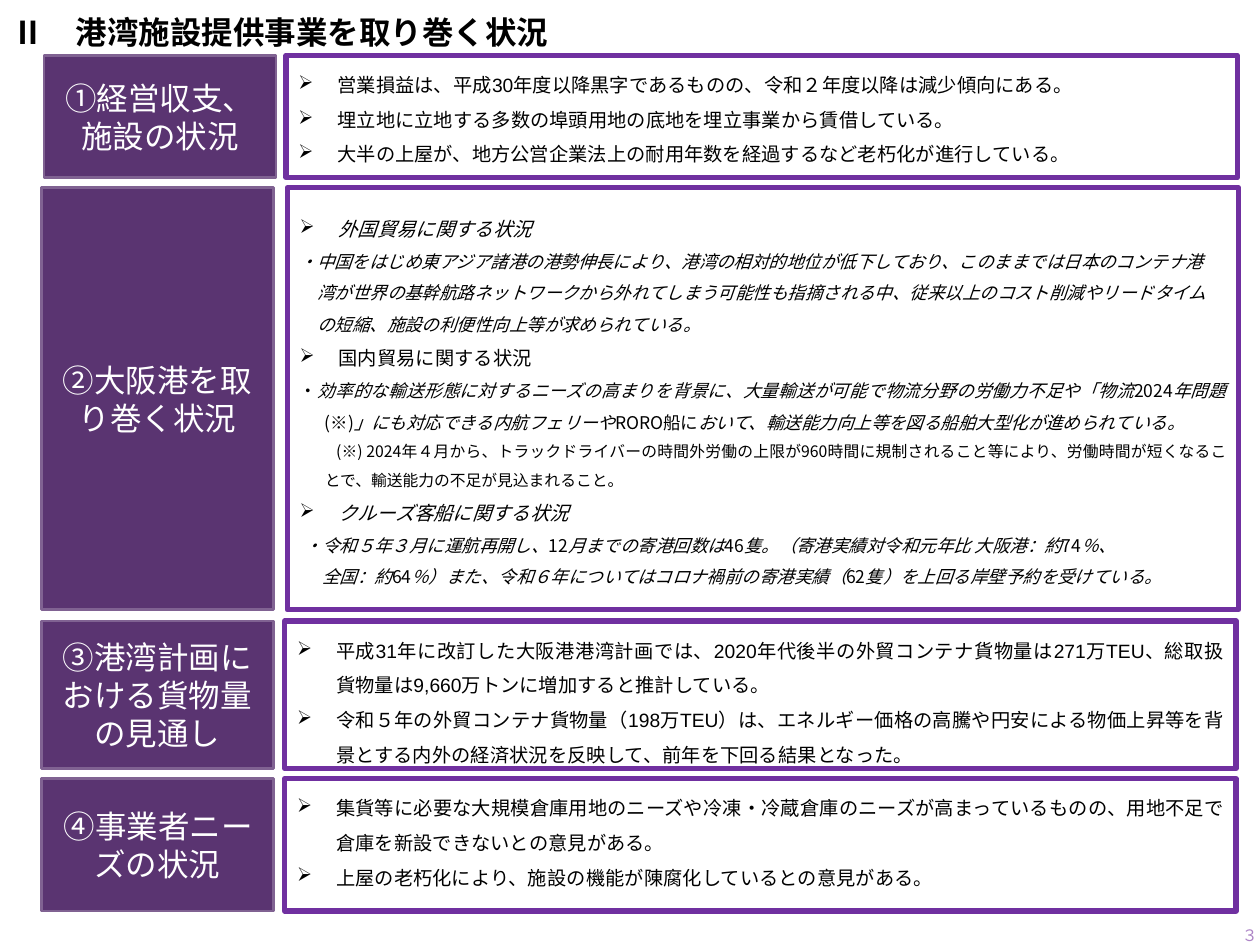
from pptx import Presentation
from pptx.dml.color import RGBColor
from pptx.enum.shapes import MSO_SHAPE as Shape
from pptx.enum.text import MSO_ANCHOR as Anchor, MSO_AUTO_SIZE as Fit, PP_ALIGN as Align
from pptx.oxml.ns import qn
from pptx.util import Inches, Pt
from lxml.etree import SubElement

BLACK = RGBColor(0x00, 0x00, 0x00)
WHITE = RGBColor(0xFF, 0xFF, 0xFF)
PLUM = RGBColor(0x5A, 0x34, 0x71)
EDGE = RGBColor(0x80, 0x62, 0x92)
FRAME = RGBColor(0x70, 0x30, 0xA0)
LILAC = RGBColor(0xAD, 0x84, 0xC6)
CJK = "Noto Sans CJK JP"


def add_run(para, text, size, face, color, bold=False, slant=False):
    run = para.add_run()
    run.text = text
    font = run.font
    font.size, font.name, font.bold, font.italic = Pt(size), face, bold, slant
    font.color.rgb = color
    SubElement(font._element, qn("a:ea"), typeface=CJK)


def add_box(left, top, wide, high, line, weight):
    box = slide.shapes.add_shape(
        Shape.RECTANGLE, Inches(left), Inches(top), Inches(wide), Inches(high))
    box.shadow.inherit = False
    box.line.color.rgb = line
    box.line.width = Pt(weight)
    box.text_frame.word_wrap = True
    return box


deck = Presentation()
deck.slide_width, deck.slide_height = Inches(10), Inches(7.5)
slide = deck.slides.add_slide(deck.slide_layouts[5])

title = slide.shapes.title
title.left, title.top = Inches(0), Inches(0.05)
title.width, title.height = Inches(8.62), Inches(0.68)
frame = title.text_frame
frame.auto_size = Fit.NONE
frame.vertical_anchor = Anchor.TOP
para = frame.paragraphs[0]
para.alignment = Align.LEFT
add_run(para, "Ⅱ\u3000港湾施設提供事業を取り巻く状況".replace("\u3000", "　"),
        18, "Arial", BLACK, bold=True)

# kind: margin, first-line indent, size, bullet, alignment
KINDS = {
    "point": (0.31, -0.31, 11, True, Align.JUSTIFY),
    "lines": (0.14, -0.14, 10, False, Align.LEFT),
    "text": (0.2, -0.2, 10, False, Align.JUSTIFY),
    "note": (0.2, 0.09, 9, False, Align.JUSTIFY),
    "tail": (0.18, -0.14, 10, False, Align.LEFT),
}

# each paragraph: kind, line spacing, first run italic, runs alternating italic and upright
ROWS = [
    ("①経営収支、施設の状況", 0.35, 2.27, 0.44, 0.97, "Arial", [
        ("point", 1.5, False, ["営業損益は、平成30年度以降黒字であるものの、令和２年度以降は減少傾向にある。"]),
        ("point", 1.5, False, ["埋立地に立地する多数の埠頭用地の底地を埋立事業から賃借している。"]),
        ("point", 1.5, False, ["大半の上屋が、地方公営企業法上の耐用年数を経過するなど老朽化が進行している。"]),
    ]),
    ("②大阪港を取り巻く状況", 0.33, 2.28, 1.49, 3.35, CJK, [
        ("point", 2, True, ["外国貿易に関する状況"]),
        ("lines", 1.5, True, [
            "・中国をはじめ東アジア諸港の港勢伸長により、港湾の相対的地位が低下しており、このままでは日本のコンテナ港\n"
            "湾が世界の基幹航路ネットワークから外れてしまう可能性も指摘される中、従来以上のコスト削減やリードタイム\n"
            "の短縮、施設の利便性向上等が求められている。"]),
        ("point", 1.5, False, ["国内貿易に関する状況"]),
        ("text", 1.5, False, [
            "・", "効率的な輸送形態に対するニーズの高まりを背景に、大量輸送が可能で物流分野の労働力不足や「物流",
            "2024", "年問題", "(※)", "」にも対応できる内航フェリーや", "RORO船に",
            "おいて、輸送能力向上等を図る船舶大型化が進められている。"]),
        ("note", 1.5, False, [
            "(※) 2024年４月から、トラックドライバーの時間外労働の上限が960時間に規制されること等により、"
            "労働時間が短くなることで、輸送能力の不足が見込まれること。"]),
        ("point", 1.5, True, ["クルーズ客船に関する状況"]),
        ("tail", 1.5, True, [
            "・令和５年３月に運航再開し、", "12", "月までの寄港回数は", "46",
            "隻。（寄港実績対令和元年比 大阪港：約", "74", "％、\n全国：約", "64",
            "％）また、令和６年についてはコロナ禍前の寄港実績（", "62",
            "隻）を上回る岸壁予約を受けている。"]),
    ]),
    ("③港湾計画における貨物量の見通し", 0.33, 2.26, 4.93, 1.17, "Arial", [
        ("point", 1.5, False, [
            "平成31年に改訂した大阪港港湾計画では、2020年代後半の外貿コンテナ貨物量は271万TEU、"
            "総取扱貨物量は9,660万トンに増加すると推計している。"]),
        ("point", 1.5, False, [
            "令和５年の外貿コンテナ貨物量（198万TEU）は、エネルギー価格の高騰や円安による物価上昇等を"
            "背景とする内外の経済状況を反映して、前年を下回る結果となった。"]),
    ]),
    ("④事業者ニーズの状況", 0.33, 2.26, 6.18, 1.05, "Arial", [
        ("point", 1.5, False, [
            "集貨等に必要な大規模倉庫用地のニーズや冷凍・冷蔵倉庫のニーズが高まっているものの、"
            "用地不足で倉庫を新設できないとの意見がある。"]),
        ("point", 1.5, False, ["上屋の老朽化により、施設の機能が陳腐化しているとの意見がある。"]),
    ]),
]

for head, left, edge, top, high, face, items in ROWS:
    label = add_box(left, top, 1.84, high, EDGE, 1.5)
    label.fill.solid()
    label.fill.fore_color.rgb = PLUM
    label.text_frame.vertical_anchor = Anchor.MIDDLE
    para = label.text_frame.paragraphs[0]
    para.alignment = Align.CENTER
    add_run(para, head, 18, "Quicksand", WHITE)

    panel = add_box(edge, top, 7.55, high, FRAME, 3)
    panel.fill.background()
    frame = panel.text_frame
    frame.vertical_anchor = Anchor.TOP
    for rank, (kind, space, slant, runs) in enumerate(items):
        margin, indent, size, mark, align = KINDS[kind]
        para = frame.add_paragraph() if rank else frame.paragraphs[0]
        para.alignment = align
        para.line_spacing = space
        props = para._p.get_or_add_pPr()
        props.set("marL", str(Inches(margin)))
        props.set("indent", str(Inches(indent)))
        if mark:
            SubElement(props, qn("a:buFont"), typeface="Wingdings")
            SubElement(props, qn("a:buChar"), char="Ø")
        for text in runs:
            for part, line in enumerate(text.split("\n")):
                if part:
                    para.add_line_break()
                add_run(para, line, size, face, BLACK, slant=slant)
            slant = not slant

page = slide.shapes.add_textbox(Inches(9.52), Inches(7.22), Inches(0.56), Inches(0.4))
page.text_frame.word_wrap = True
page.text_frame.vertical_anchor = Anchor.MIDDLE
para = page.text_frame.paragraphs[0]
para.alignment = Align.RIGHT
add_run(para, "３", 9, "Quicksand", LILAC)

deck.save("out.pptx")
